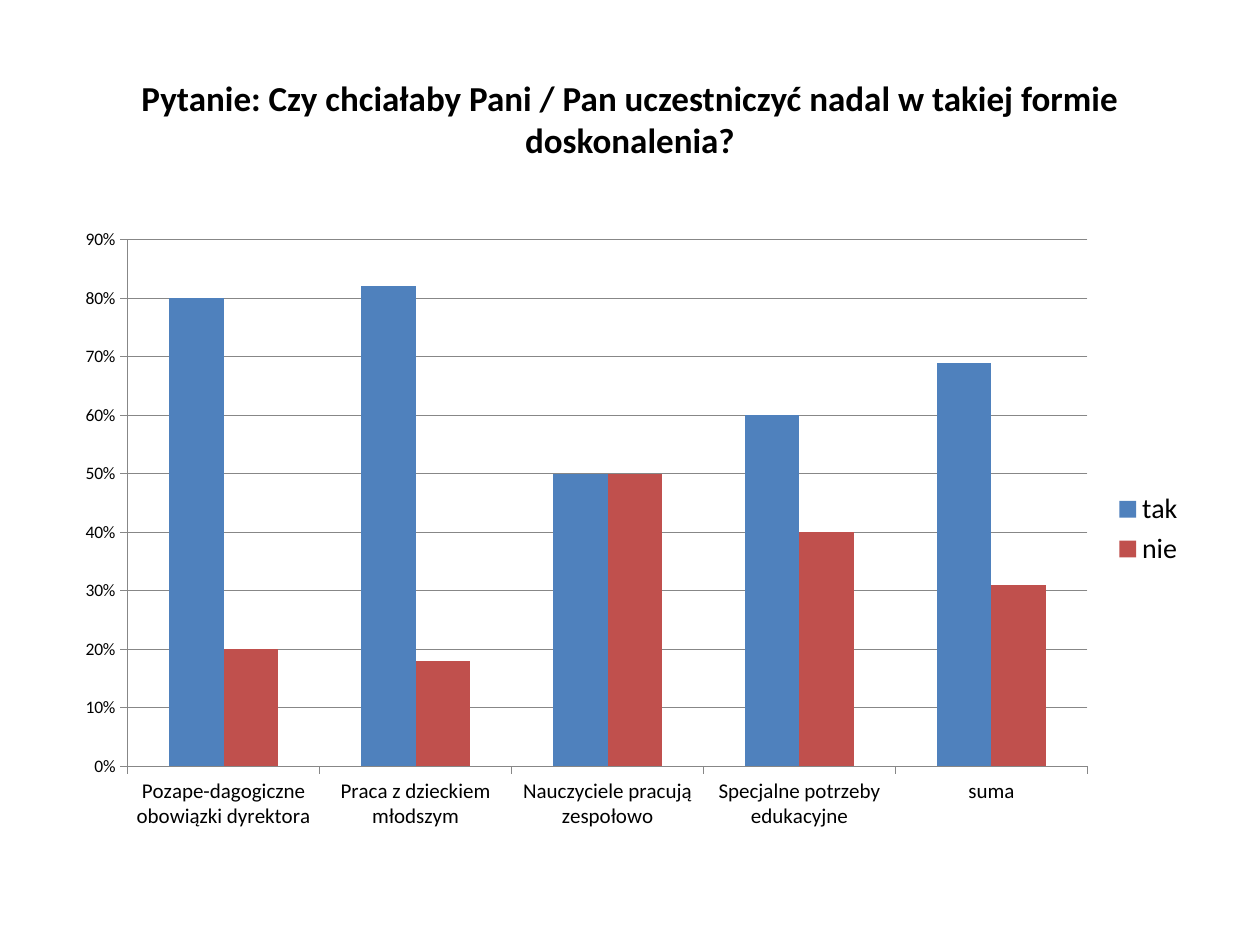
from pptx import Presentation
from pptx.chart.data import CategoryChartData
from pptx.dml.color import RGBColor
from pptx.enum.chart import XL_CHART_TYPE, XL_LEGEND_POSITION, XL_TICK_MARK
from pptx.enum.text import MSO_ANCHOR, PP_ALIGN
from pptx.util import Inches, Pt

COLUMN = XL_CHART_TYPE.COLUMN_CLUSTERED
RIGHT = XL_LEGEND_POSITION.RIGHT
OUT = XL_TICK_MARK.OUTSIDE
MIDDLE = MSO_ANCHOR.MIDDLE
CENTER = PP_ALIGN.CENTER

WIDE, HIGH = Inches(10), Inches(7.5)
FACE = "Calibri"
COLORS = {"text": "000000", "line": "878787", "paper": "FFFFFF",
          "tak": "4F81BD", "nie": "C0504D"}

CATS = ["Pozape-dagogiczne obowiązki dyrektora", "Praca z dzieckiem młodszym",
        "Nauczyciele pracują zespołowo", "Specjalne potrzeby edukacyjne", "suma"]
VOTES = {"tak": [0.8, 0.82, 0.5, 0.6, 0.69],
         "nie": [0.2, 0.18, 0.5, 0.4, 0.31]}


def color(name):
    return RGBColor.from_string(COLORS[name])


def box(left, top, width, height):
    """Turn shares of the slide into lengths."""
    return (int(WIDE * left), int(HIGH * top),
            int(WIDE * width), int(HIGH * height))


def style(font, size, bold=False):
    font.name, font.size, font.bold = FACE, Pt(size), bold
    font.color.rgb = color("text")


def write(frame, text, size, bold=False, align=CENTER, anchor=MIDDLE):
    frame.word_wrap = True
    frame.vertical_anchor = anchor
    par = frame.paragraphs[0]
    par.alignment = align
    run = par.add_run()
    run.text = text
    style(run.font, size, bold)


def add_title(slide, area, text):
    title = slide.shapes.title
    title.left, title.top, title.width, title.height = area
    write(title.text_frame, text, size=20, bold=True)


def add_bars(slide, area):
    data = CategoryChartData(number_format="0%")
    data.categories = CATS
    for name, vals in VOTES.items():
        data.add_series(name, vals)
    chart = slide.shapes.add_chart(COLUMN, *area, data).chart
    chart.has_title = False
    style(chart.font, 10)

    # Bars
    plot = chart.plots[0]
    plot.gap_width, plot.overlap = 150, 0
    plot.vary_by_categories = False
    for bars in plot.series:
        bars.format.fill.solid()
        bars.format.fill.fore_color.rgb = color(bars.name)

    # Axes and grid
    cat, val = chart.category_axis, chart.value_axis
    val.minimum_scale, val.maximum_scale, val.major_unit = 0, 0.9, 0.1
    val.has_major_gridlines = True
    val.tick_labels.number_format = "0%"
    val.tick_labels.number_format_is_linked = False
    for axis, size in ((cat, 12), (val, 10)):
        axis.major_tick_mark = OUT
        style(axis.tick_labels.font, size)
    for part in (cat, val, val.major_gridlines):
        part.format.line.color.rgb = color("line")
        part.format.line.width = Pt(0.75)

    # Legend
    chart.has_legend = True
    chart.legend.position = RIGHT
    chart.legend.include_in_layout = False
    style(chart.legend.font, 16)


def main():
    prs = Presentation()
    prs.slide_width, prs.slide_height = WIDE, HIGH
    slide = prs.slides.add_slide(prs.slide_layouts.get_by_name("Title Only"))
    slide.background.fill.solid()
    slide.background.fill.fore_color.rgb = color("paper")
    add_title(slide, box(0.05, 0.04, 0.9, 0.17),
              "Pytanie: Czy chciałaby Pani / Pan uczestniczyć nadal "
              "w takiej formie doskonalenia?")
    add_bars(slide, box(0.05, 0.23, 0.9, 0.66))
    prs.save("out.pptx")


if __name__ == "__main__":
    main()
